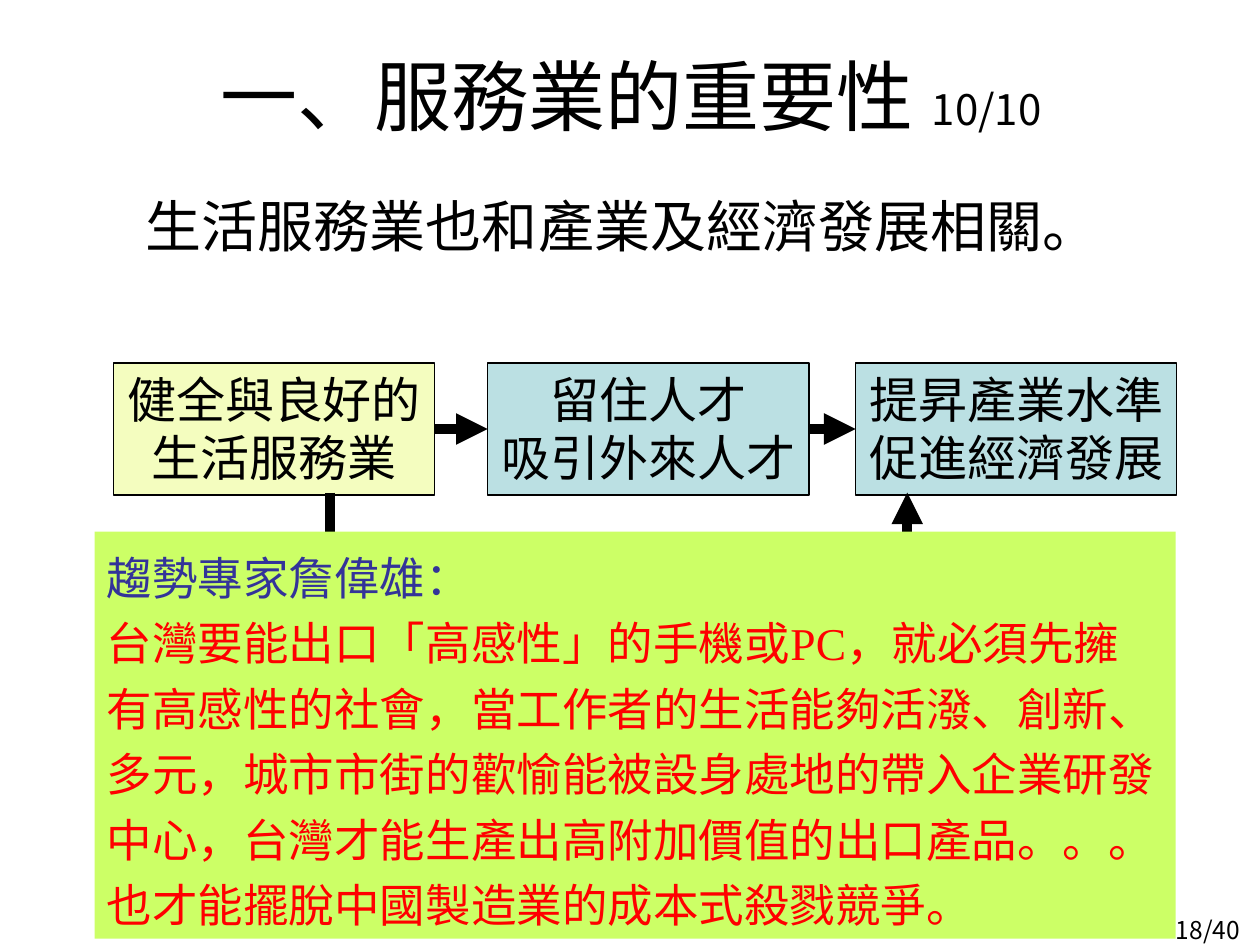
from dataclasses import dataclass

from lxml import etree
from pptx import Presentation
from pptx.dml.color import RGBColor
from pptx.enum.shapes import MSO_CONNECTOR, MSO_SHAPE
from pptx.enum.text import MSO_ANCHOR, MSO_AUTO_SIZE, PP_ALIGN
from pptx.oxml.ns import qn
from pptx.util import Inches, Pt

LEFT, CENTER, RIGHT = PP_ALIGN.LEFT, PP_ALIGN.CENTER, PP_ALIGN.RIGHT
TOP, MIDDLE = MSO_ANCHOR.TOP, MSO_ANCHOR.MIDDLE
GROW, FIXED = MSO_AUTO_SIZE.SHAPE_TO_FIT_TEXT, MSO_AUTO_SIZE.NONE
STRAIGHT, RECTANGLE = MSO_CONNECTOR.STRAIGHT, MSO_SHAPE.RECTANGLE
LEFT_SITE, RIGHT_SITE = 1, 3

CJK_FONT = "Noto Sans CJK TC"
COLORS = {
    "text": "000000",
    "cause": "F4FDBF",
    "effect": "BBE0E3",
    "quote": "CCFF66",
    "speaker": "333399",
    "statement": "FF0000",
}


@dataclass
class Piece:
    text: str
    size: float
    font: str = CJK_FONT
    color: str = "text"


@dataclass
class Step:
    left: float
    fill: str
    lines: tuple[str, str]


@dataclass
class Arrow:
    start: tuple[float, float]
    end: tuple[float, float]


def rgb(name: str) -> RGBColor:
    return RGBColor.from_string(COLORS[name])


def box(left: float, top: float, width: float, height: float) -> tuple:
    return Inches(left), Inches(top), Inches(width), Inches(height)


def write(shape, paragraphs: list[list[Piece]], align=LEFT, spacing=None, **frame_format) -> None:
    """Fill a shape with paragraphs made of formatted pieces."""
    frame = shape.text_frame
    for name, value in frame_format.items():
        setattr(frame, name, value)
    for index, pieces in enumerate(paragraphs):
        paragraph = frame.paragraphs[0] if index == 0 else frame.add_paragraph()
        paragraph.alignment = align
        if spacing:
            paragraph.line_spacing = spacing
        for piece in pieces:
            run = paragraph.add_run()
            run.text = piece.text
            run.font.size = Pt(piece.size)
            run.font.name = piece.font
            run.font.color.rgb = rgb(piece.color)
            # East Asian characters take their own typeface
            latin = run.font._element.find(qn("a:latin"))
            east_asian = etree.Element(qn("a:ea"), typeface=CJK_FONT)
            latin.addnext(east_asian)


def add_rectangle(slide, place: tuple, fill: str, outlined: bool):
    shape = slide.shapes.add_shape(RECTANGLE, *place)
    shape.shadow.inherit = False
    shape.fill.solid()
    shape.fill.fore_color.rgb = rgb(fill)
    if outlined:
        shape.line.color.rgb = rgb("text")
        shape.line.width = Pt(0.75)
    else:
        shape.line.fill.background()
    return shape


def add_step(slide, step: Step):
    shape = add_rectangle(slide, box(step.left, 2.88, 2.55, 1.05), step.fill, True)
    write(shape, [[Piece(line, 28, "Arial")] for line in step.lines], CENTER,
          word_wrap=False, auto_size=GROW, vertical_anchor=TOP)
    return shape


def add_arrow(slide, arrow: Arrow):
    points = [Inches(value) for value in arrow.start + arrow.end]
    connector = slide.shapes.add_connector(STRAIGHT, *points)
    connector.line.color.rgb = rgb("text")
    connector.line.width = Pt(6)
    etree.SubElement(connector.line._get_or_add_ln(), qn("a:tailEnd"), type="triangle")
    etree.SubElement(connector._element.spPr, qn("a:effectLst"))
    return connector


STEPS = [
    Step(0.9, "cause", ("健全與良好的", "生活服務業")),
    Step(3.87, "effect", ("留住人才", "吸引外來人才")),
    Step(6.79, "effect", ("提昇產業水準", "促進經濟發展")),
]
VERTICAL_ARROWS = [Arrow((2.62, 3.91), (2.62, 4.77)), Arrow((7.2, 4.69), (7.2, 3.91))]
STATEMENT = (
    "台灣要能出口「高感性」的手機或PC，就必須先擁有高感性的社會，"
    "當工作者的生活能夠活潑、創新、多元，城市市街的歡愉能被設身處地的帶入企業研發中心，"
    "台灣才能生產出高附加價值的出口產品。。。也才能擺脫中國製造業的成本式殺戮競爭。"
)


def main() -> None:
    presentation = Presentation()
    presentation.slide_width, presentation.slide_height = Inches(10), Inches(7.5)
    slide = presentation.slides.add_slide(presentation.slide_layouts[5])

    # Page number
    page_number = slide.shapes.add_textbox(*box(9.1, 7.21, 0.84, 0.32))
    write(page_number, [[Piece("18/40", 14)]], RIGHT, word_wrap=True)

    # Title and lead sentence
    title = slide.shapes.title
    title.left, title.top, title.width, title.height = box(0.51, 0.13, 9, 1.25)
    write(title, [[Piece("一、服務業的重要性 ", 44), Piece("10/10", 24)]], CENTER,
          vertical_anchor=MIDDLE, auto_size=FIXED)
    lead = slide.shapes.add_textbox(*box(1.06, 1.47, 7.76, 0.63))
    write(lead, [[Piece("生活服務業也和產業及經濟發展相關。", 32)]],
          word_wrap=False, auto_size=GROW)

    # Chain of steps, each joined to the next
    shapes = [add_step(slide, step) for step in STEPS]
    for before, after in zip(shapes, shapes[1:]):
        connector = add_arrow(slide, Arrow((0, 0), (1, 0)))
        connector.begin_connect(before, RIGHT_SITE)
        connector.end_connect(after, LEFT_SITE)
    for arrow in VERTICAL_ARROWS:
        add_arrow(slide, arrow)

    # Expert quote
    quote = add_rectangle(slide, box(0.75, 4.22, 8.58, 3.23), "quote", False)
    write(quote,
          [[Piece("趨勢專家詹偉雄：", 26, "Times New Roman", "speaker")],
           [Piece(STATEMENT, 26, "Times New Roman", "statement")]],
          spacing=1.2, word_wrap=True, auto_size=GROW, vertical_anchor=MIDDLE)

    presentation.save("out.pptx")


if __name__ == "__main__":
    main()
